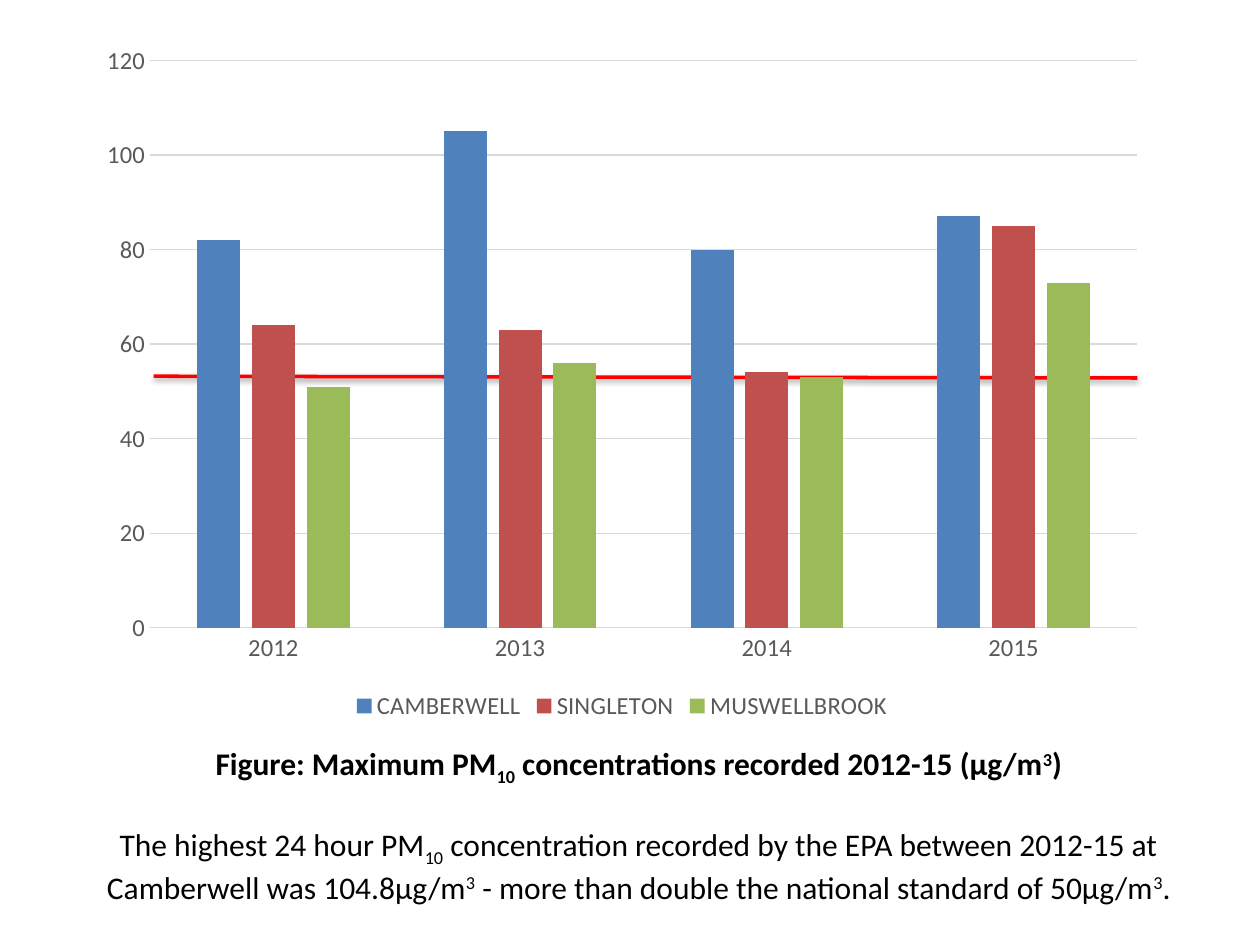
from dataclasses import dataclass

from lxml.etree import SubElement
from pptx import Presentation
from pptx.chart.data import CategoryChartData
from pptx.dml.color import RGBColor
from pptx.enum.chart import XL_CHART_TYPE, XL_LEGEND_POSITION, XL_TICK_MARK
from pptx.enum.shapes import MSO_CONNECTOR
from pptx.enum.text import MSO_ANCHOR, MSO_AUTO_SIZE, PP_ALIGN
from pptx.oxml import parse_xml
from pptx.oxml.ns import nsdecls, qn
from pptx.util import Pt


@dataclass(frozen=True)
class Theme:
    font: str = "Calibri"
    title_size: int = 18
    chart_size: int = 14
    text: RGBColor = RGBColor.from_string("000000")
    label: RGBColor = RGBColor.from_string("595959")
    grid: RGBColor = RGBColor.from_string("D9D9D9")
    limit: RGBColor = RGBColor.from_string("FF0000")
    camberwell: RGBColor = RGBColor.from_string("4F81BD")
    singleton: RGBColor = RGBColor.from_string("C0504D")
    muswellbrook: RGBColor = RGBColor.from_string("9BBB59")


theme = Theme()
SUB, SUPER = -25000, 30000


def style_font(font, size, color):
    font.name = theme.font
    font.size = Pt(size)
    font.color.rgb = color


deck = Presentation()
deck.slide_width, deck.slide_height = Pt(720), Pt(540)
page = deck.slides.add_slide(deck.slide_layouts[5])

# Caption and finding
title = page.shapes.title
title.left, title.top, title.width, title.height = Pt(41), Pt(414.9), Pt(648), Pt(113)
frame = title.text_frame
frame.word_wrap = True
frame.auto_size = MSO_AUTO_SIZE.NONE
frame.vertical_anchor = MSO_ANCHOR.MIDDLE

caption = [
    ("Figure: Maximum PM", 0), ("10", SUB),
    (" concentrations recorded 2012-15 (μg/m", 0), ("3", SUPER), (")", 0),
]
finding = [
    ("The highest 24 hour PM", 0), ("10", SUB),
    (" concentration recorded by the EPA between 2012-15 at Camberwell was 104.8μg/m", 0),
    ("3", SUPER), (" - more than double the national standard of 50μg/m", 0),
    ("3", SUPER), (".", 0),
]
caption_para = frame.paragraphs[0]
caption_para.space_after = Pt(21.6)
for para, parts, bold in (
    (caption_para, caption, True),
    (frame.add_paragraph(), finding, False),
):
    para.alignment = PP_ALIGN.CENTER
    for text, baseline in parts:
        span = para.add_run()
        span.text = text
        style_font(span.font, theme.title_size, theme.text)
        span.font.bold = bold
        if baseline:
            span.font._element.set("baseline", str(baseline))

# National standard line, behind the columns
limit = page.shapes.add_connector(
    MSO_CONNECTOR.STRAIGHT, Pt(87.8), Pt(215), Pt(650), Pt(216)
)
limit.line.color.rgb = theme.limit
limit.line.width = Pt(2)
effects = parse_xml(f"<a:effectLst {nsdecls('a')}/>")
shadow = SubElement(
    effects, qn("a:outerShdw"), blurRad=str(Pt(3.1)), dist=str(Pt(1.6)),
    dir="5400000", rotWithShape="0",
)
shadow_color = SubElement(shadow, qn("a:srgbClr"), val=str(theme.text))
SubElement(shadow_color, qn("a:alpha"), val="38000")
limit._element.spPr.append(effects)

# Column chart
stations = [
    ("CAMBERWELL", theme.camberwell, (82, 105, 80, 87)),
    ("SINGLETON", theme.singleton, (64, 63, 54, 85)),
    ("MUSWELLBROOK", theme.muswellbrook, (51, 56, 53, 73)),
]
data = CategoryChartData()
data.categories = ["2012", "2013", "2014", "2015"]
for name, _, values in stations:
    data.add_series(name, values)
chart = page.shapes.add_chart(
    XL_CHART_TYPE.COLUMN_CLUSTERED, Pt(49), Pt(18), Pt(613), Pt(397), data
).chart
chart.has_title = False
style_font(chart.font, theme.chart_size, theme.text)

plot = chart.plots[0]
plot.gap_width, plot.overlap = 219, -27
plot.vary_by_categories = False
for series, (_, color, _) in zip(plot.series, stations):
    series.format.fill.solid()
    series.format.fill.fore_color.rgb = color

years, levels = chart.category_axis, chart.value_axis
for axis in (years, levels):
    axis.major_tick_mark = axis.minor_tick_mark = XL_TICK_MARK.NONE
    style_font(axis.tick_labels.font, theme.chart_size, theme.label)
levels.minimum_scale, levels.maximum_scale, levels.major_unit = 0, 120, 20
levels.format.line.fill.background()
for line in (years.format.line, levels.major_gridlines.format.line):
    line.color.rgb = theme.grid
    line.width = Pt(0.75)

chart.has_legend = True
chart.legend.position = XL_LEGEND_POSITION.BOTTOM
chart.legend.include_in_layout = False
style_font(chart.legend.font, theme.chart_size, theme.label)

deck.save("out.pptx")
